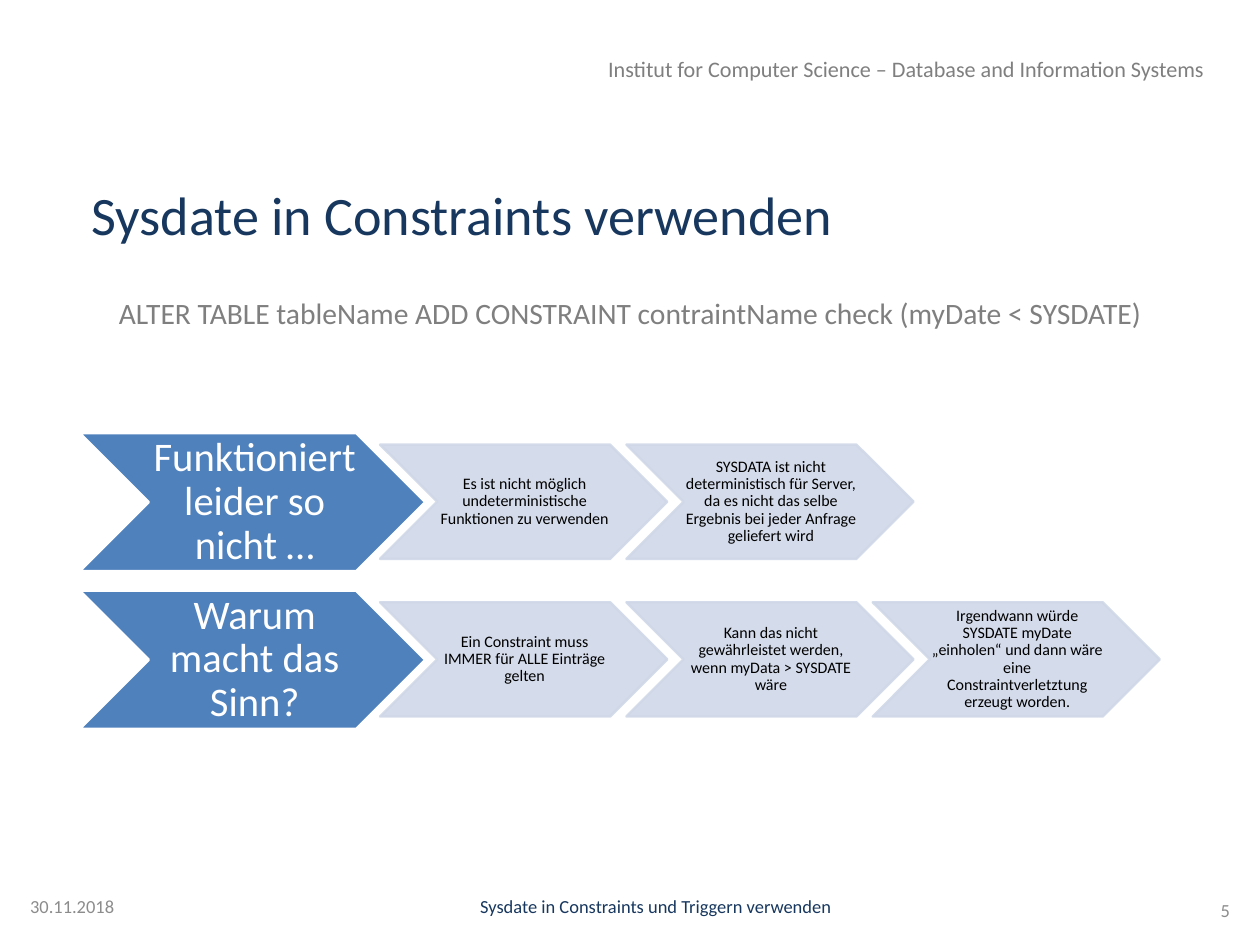
import pptx
import pptx.util
import pptx.dml.color
import pptx.enum.shapes
import pptx.enum.text
import pptx.oxml
import pptx.oxml.ns

PX = 9144
RGB = pptx.dml.color.RGBColor
NAVY = RGB(0x17, 0x37, 0x5E)
GRAY = RGB(0x7F, 0x7F, 0x7F)
FOOTER_GRAY = RGB(0x8C, 0x8C, 0x8C)
BLUE = RGB(0x4F, 0x81, 0xBD)
PALE = RGB(0xD0, 0xD8, 0xE8)
WHITE = RGB(0xFF, 0xFF, 0xFF)
BLACK = RGB(0, 0, 0)
ALIGN = pptx.enum.text.PP_ALIGN
ANCHOR = pptx.enum.text.MSO_ANCHOR

ROWS = [
    ("Funktioniert leider so nicht …", [
        "Es ist nicht möglich undeterministische Funktionen zu verwenden",
        "SYSDATA ist nicht deterministisch für Server, da es nicht das selbe "
        "Ergebnis bei jeder Anfrage geliefert wird",
    ]),
    ("Warum macht das Sinn?", [
        "Ein Constraint muss IMMER für ALLE Einträge gelten",
        "Kann das nicht gewährleistet werden, wenn myData > SYSDATE wäre",
        "Irgendwann würde SYSDATE myDate „einholen“ und dann wäre eine "
        "Constraintverletztung erzeugt worden.",
    ]),
]


def px(n):
    return pptx.util.Emu(n * PX)


def write(sp, text, size, color, align=ALIGN.LEFT, anchor=ANCHOR.TOP,
          insets=(0, 0, 0, 0), spacing=1.0):
    tf = sp.text_frame
    tf.word_wrap = True
    tf.auto_size = pptx.enum.text.MSO_AUTO_SIZE.NONE
    tf.vertical_anchor = anchor
    tf.margin_left, tf.margin_top, tf.margin_right, tf.margin_bottom = map(px, insets)
    p = tf.paragraphs[0]
    p.alignment = align
    p.line_spacing = spacing
    r = p.add_run()
    r.text = text
    r.font.name = "Calibri"
    r.font.size = pptx.util.Pt(size)
    r.font.color.rgb = color


def add_text(s, box, text, **fmt):
    write(s.shapes.add_textbox(*map(px, box)), text, **fmt)


def set_alpha(fill, percent):
    clr = fill._xPr.find(".//" + pptx.oxml.ns.qn("a:srgbClr"))
    alpha = pptx.oxml.parse_xml(
        f'<a:alpha {pptx.oxml.ns.nsdecls("a")} val="{percent * 1000}"/>')
    clr.append(alpha)


def add_chevron(s, box, text, fill, line, alpha=100, **fmt):
    sp = s.shapes.add_shape(pptx.enum.shapes.MSO_SHAPE.CHEVRON, *map(px, box))
    sp.shadow.inherit = False
    sp.fill.solid()
    sp.fill.fore_color.rgb = fill
    sp.line.width = pptx.util.Pt(2)
    sp.line.color.rgb = line
    if alpha < 100:
        set_alpha(sp.fill, alpha)
        set_alpha(sp.line.fill, alpha)
    write(sp, text, align=ALIGN.CENTER, anchor=ANCHOR.MIDDLE, spacing=0.9, **fmt)


def add_row(s, box, head, steps):
    x, y, w, h = box
    add_chevron(s, (x, y, 390, h), head, BLUE, WHITE,
                size=33, color=WHITE, insets=(5, 2, 0, 2))
    for i, step in enumerate(steps):
        add_chevron(s, (x + 339 + 278 * i, y + 13, 324, h - 27), step, PALE, PALE,
                    alpha=90, size=13, color=BLACK, insets=(2, 1, 0, 1))


def add_process(s, box):
    x, y, w, h = box
    row_h, pitch = 156, h - 156
    for i, (head, steps) in enumerate(ROWS):
        add_row(s, (x, y + pitch * i, w, row_h), head, steps)


def add_heading(s, box):
    x, y, w, h = box
    add_text(s, (x + 648, y + 58, 721, 61),
             "Institut for Computer Science – Database and Information Systems",
             size=18, color=GRAY, align=ALIGN.RIGHT, insets=(10, 5, 10, 5))
    title = s.shapes.title
    title.left, title.top, title.width, title.height = map(
        px, (x + 103, y + 205, 1186, 74))
    write(title, "Sysdate in Constraints verwenden", size=44, color=NAVY)
    add_text(s, (x, y + 333, w, 40),
             "ALTER TABLE tableName ADD CONSTRAINT contraintName check (myDate < SYSDATE)",
             size=24, color=GRAY, align=ALIGN.CENTER)


def add_footer(s, box):
    x, y, w, h = box
    add_text(s, (x, y, 160, h), "30.11.2018", size=15, color=FOOTER_GRAY)
    add_text(s, (x + 235, y, 942, h), "Sysdate in Constraints und Triggern verwenden",
             size=15, color=NAVY, align=ALIGN.CENTER)
    add_text(s, (x + w - 94, y + 4, 94, h - 4), "5",
             size=15, color=FOOTER_GRAY, align=ALIGN.RIGHT)


def main():
    prs = pptx.Presentation()
    prs.slide_width, prs.slide_height = px(1422), px(1067)
    s = prs.slides.add_slide(prs.slide_layouts.get_by_name("Title Only"))
    add_heading(s, (0, 0, 1422, 373))
    add_process(s, (90, 489, 1219, 334))
    add_footer(s, (34, 1011, 1354, 31))
    prs.save("out.pptx")


if __name__ == "__main__":
    main()
